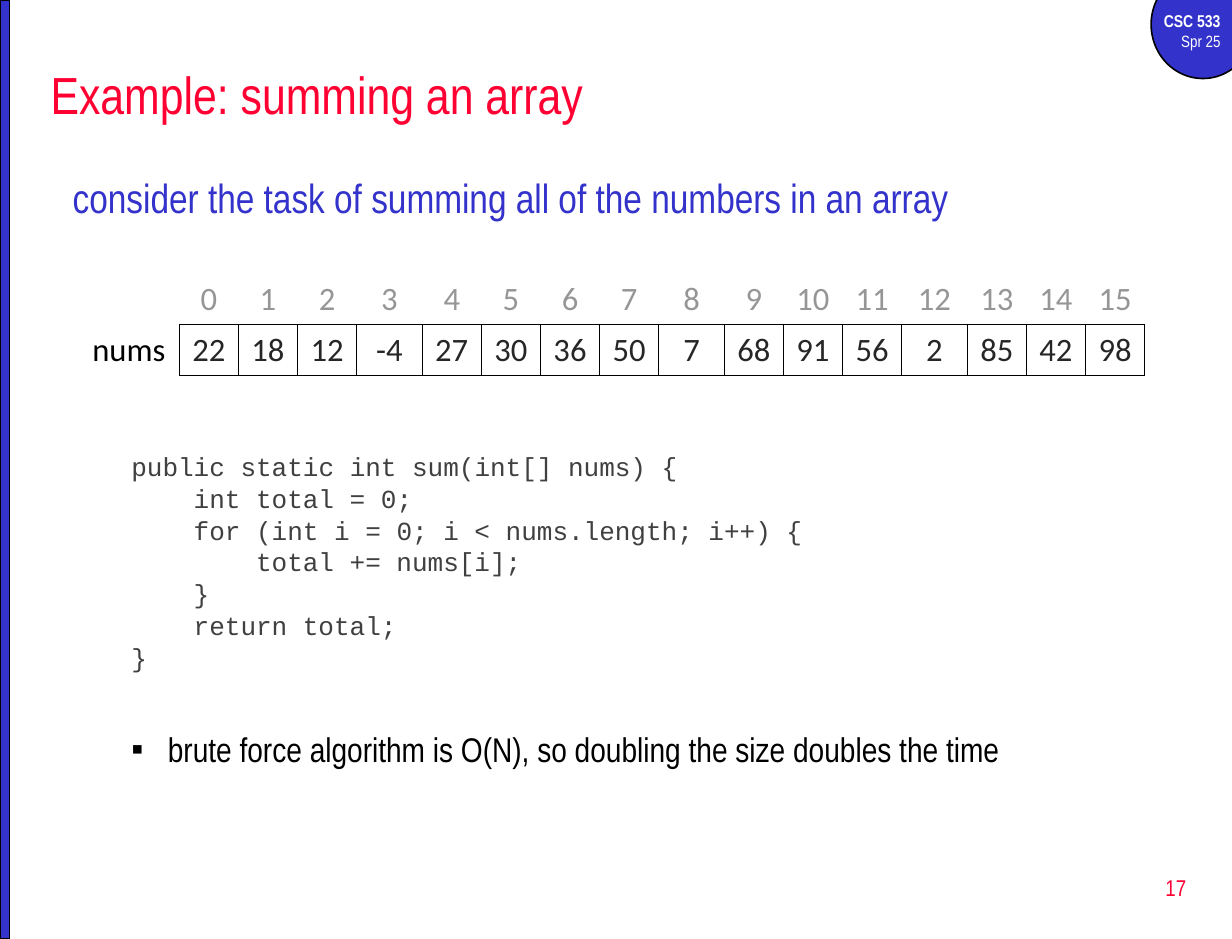
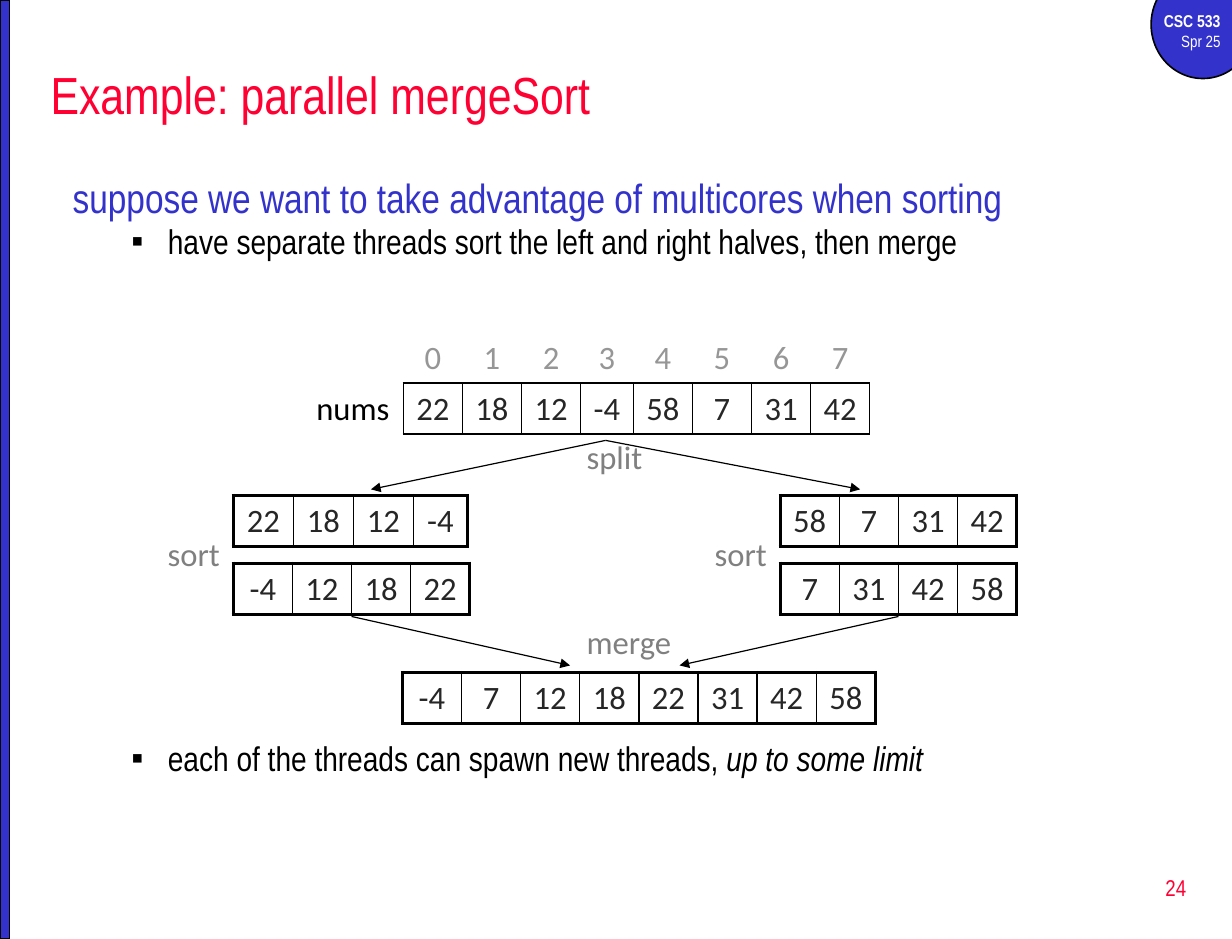
from dataclasses import dataclass

from lxml.etree import SubElement
from pptx import Presentation
from pptx.dml.color import RGBColor
from pptx.enum.shapes import MSO_CONNECTOR, MSO_SHAPE
from pptx.enum.text import MSO_ANCHOR, MSO_AUTO_SIZE, PP_ALIGN
from pptx.oxml.ns import qn
from pptx.util import Cm, Pt

BLUE = RGBColor(0x33, 0x33, 0xCC)
RED = RGBColor(0xFF, 0x00, 0x33)
BLACK = RGBColor(0x00, 0x00, 0x00)
WHITE = RGBColor(0xFF, 0xFF, 0xFF)
CODE_GRAY = RGBColor(0x40, 0x40, 0x40)
VALUE_GRAY = RGBColor(0x26, 0x26, 0x26)
INDEX_GRAY = RGBColor(0x96, 0x96, 0x96)
LABEL_GRAY = RGBColor(0x80, 0x80, 0x80)

HEADING_FONT = "Arial Narrow"
TABLE_FONT = "Calibri"
CODE_FONT = "Courier New"
PLAIN_TABLE_STYLE = "{2D5ABB26-0587-4C30-8999-92F81FD0307C}"

CELL_WIDTH = 1.28
LABEL_WIDTH = 2.18
ROW_HEIGHT = 1.1
THIN, THICK = 1, 2.25


@dataclass
class Box:
    left: float
    top: float
    width: float
    height: float

    def lengths(self):
        return Cm(self.left), Cm(self.top), Cm(self.width), Cm(self.height)


SLIDE_BOX = Box(0, 0, 26.67, 20.32)
TITLE_BOX = Box(0.84, 1.07, 25.2, 1.9)
BODY_BOX = Box(1.32, 3.61, 24.28, 15.04)
NUMBER_BOX = Box(20.37, 18.52, 5.56, 1.35)


def set_font(font, name, size, color, bold=False):
    font.name = name
    font.size = Pt(size)
    font.color.rgb = color
    font.bold = bold


def place(shape, box):
    shape.left, shape.top, shape.width, shape.height = box.lengths()


def add_text(slide, box, text, name, size, color, alignment=PP_ALIGN.LEFT):
    shape = slide.shapes.add_textbox(*box.lengths())
    frame = shape.text_frame
    frame.word_wrap = False
    paragraph = frame.paragraphs[0]
    paragraph.text = text
    paragraph.alignment = alignment
    set_font(paragraph.font, name, size, color)
    return shape


def add_blue_shape(slide, kind, box):
    shape = slide.shapes.add_shape(kind, *box.lengths())
    shape.shadow.inherit = False
    shape.fill.solid()
    shape.fill.fore_color.rgb = BLUE
    shape.line.color.rgb = BLACK
    shape.line.width = Pt(1)


def add_course_badge(slide, right):
    add_blue_shape(slide, MSO_SHAPE.OVAL, Box(right - 1.75, -0.64, 2.24, 2.34))
    badge = add_text(slide, Box(right - 2.11, 0.1, 2.11, 1.17), "CSC 533",
                     HEADING_FONT, 10.5, WHITE, PP_ALIGN.RIGHT)
    badge.text_frame.word_wrap = True
    badge.text_frame.paragraphs[0].font.bold = True
    term = badge.text_frame.add_paragraph()
    term.text = "Spr 25"
    term.alignment = PP_ALIGN.RIGHT
    set_font(term.font, HEADING_FONT, 10, WHITE)


def add_base_slide(presentation, title, number):
    slide = presentation.slides.add_slide(presentation.slide_layouts[1])
    add_course_badge(slide, SLIDE_BOX.width)
    add_blue_shape(slide, MSO_SHAPE.RECTANGLE, Box(0, 0, 0.21, SLIDE_BOX.height))

    place(slide.shapes.title, TITLE_BOX)
    frame = slide.shapes.title.text_frame
    frame.auto_size = MSO_AUTO_SIZE.NONE
    frame.vertical_anchor = MSO_ANCHOR.MIDDLE
    paragraph = frame.paragraphs[0]
    paragraph.text = title
    paragraph.alignment = PP_ALIGN.LEFT
    set_font(paragraph.font, HEADING_FONT, 32, RED)

    page = add_text(slide, NUMBER_BOX, str(number), HEADING_FONT, 14, RED, PP_ALIGN.RIGHT)
    page.text_frame.word_wrap = True
    page.text_frame.vertical_anchor = MSO_ANCHOR.MIDDLE
    return slide


def start_body(slide, heading):
    body = slide.placeholders[1]
    place(body, BODY_BOX)
    frame = body.text_frame
    frame.auto_size = MSO_AUTO_SIZE.NONE
    paragraph = frame.paragraphs[0]
    paragraph.text = heading
    format_paragraph(paragraph, 0.97, -0.97, 5)
    set_font(paragraph.font, HEADING_FONT, 25, BLUE)
    return frame


def format_paragraph(paragraph, margin, indent, space_before, bullet=None):
    properties = paragraph._p.get_or_add_pPr()
    properties.set("marL", str(Cm(margin)))
    properties.set("indent", str(Cm(indent)))
    if bullet:
        SubElement(properties, qn("a:buFont"), typeface="Arial")
        SubElement(properties, qn("a:buChar"), char=bullet)
    else:
        SubElement(properties, qn("a:buNone"))
    paragraph.space_before = Pt(space_before)


def add_bullet(frame, text, space_before=4.2, emphasis=None):
    paragraph = frame.add_paragraph()
    paragraph.level = 1
    paragraph.line_spacing = 0.8
    format_paragraph(paragraph, 2.06, -0.79, space_before, "▪")
    set_font(paragraph.font, HEADING_FONT, 21, BLACK)
    paragraph.add_run().text = text
    if emphasis:
        run = paragraph.add_run()
        run.text = emphasis
        run.font.italic = True


def add_code(frame, lines, first_space):
    for position, (depth, text) in enumerate(lines):
        paragraph = frame.add_paragraph()
        paragraph.text = text
        paragraph.level = 1
        paragraph.line_spacing = 0.8
        format_paragraph(paragraph, 1.27 + depth * 1.35, 0, 4.2 if position else first_space)
        set_font(paragraph.font, CODE_FONT, 16, CODE_GRAY)


def set_borders(cell, **widths):
    properties = cell._tc.get_or_add_tcPr()
    for position, side in enumerate(side for side in "LRTB" if side in widths):
        line = properties.makeelement(qn(f"a:ln{side}"), {"w": str(Pt(widths[side]))})
        fill = SubElement(line, qn("a:solidFill"))
        SubElement(fill, qn("a:srgbClr"), val=str(BLACK))
        properties.insert(position, line)


def fill_cell(cell, text, color):
    cell.fill.background()
    paragraph = cell.text_frame.paragraphs[0]
    paragraph.text = str(text)
    paragraph.alignment = PP_ALIGN.CENTER
    set_font(paragraph.font, TABLE_FONT, 20, color)


def add_plain_table(slide, left, top, row_count, widths):
    box = Box(left, top, sum(widths), row_count * ROW_HEIGHT)
    table = slide.shapes.add_table(row_count, len(widths), *box.lengths()).table
    table.first_row = table.horz_banding = False
    table._tbl.tblPr.find(qn("a:tableStyleId")).text = PLAIN_TABLE_STYLE
    for column, width in zip(table.columns, widths):
        column.width = Cm(width)
    return table


def cell_widths(values, special_widths):
    return [special_widths.get(index, CELL_WIDTH) for index in range(len(values))]


def add_indexed_array(slide, left, top, values, special_widths):
    widths = [LABEL_WIDTH] + cell_widths(values, special_widths)
    table = add_plain_table(slide, left, top, 2, widths)
    table.cell(0, 0).fill.background()
    fill_cell(table.cell(1, 0), "nums", BLACK)
    set_borders(table.cell(1, 0), R=THIN)
    for index, value in enumerate(values):
        header, cell = table.cell(0, index + 1), table.cell(1, index + 1)
        fill_cell(header, index, INDEX_GRAY)
        set_borders(header, B=THIN)
        fill_cell(cell, value, VALUE_GRAY)
        set_borders(cell, L=THIN, R=THIN, T=THIN, B=THIN)


def add_framed_array(slide, left, top, values, special_widths={}):
    table = add_plain_table(slide, left, top, 1, cell_widths(values, special_widths))
    last = len(values) - 1
    for index, value in enumerate(values):
        cell = table.cell(0, index)
        fill_cell(cell, value, VALUE_GRAY)
        set_borders(cell, L=THIN if index else THICK, R=THIN if index < last else THICK,
                    T=THICK, B=THICK)


def add_arrow(slide, start_x, start_y, end_x, end_y):
    arrow = slide.shapes.add_connector(
        MSO_CONNECTOR.STRAIGHT, Cm(start_x), Cm(start_y), Cm(end_x), Cm(end_y))
    arrow.line.color.rgb = BLACK
    arrow.line.width = Pt(0.75)
    SubElement(arrow.line._get_or_add_ln(), qn("a:tailEnd"), type="triangle")
    SubElement(arrow._element.spPr, qn("a:effectLst"))


def add_step_label(slide, left, top, width, text):
    add_text(slide, Box(left, top, width, 1.12), text, TABLE_FONT, 20, LABEL_GRAY)


def add_merge_diagram(slide, left, top, values):
    middle = len(values) // 2
    add_indexed_array(slide, left + 3.15, top, values, {3: 1.14})
    add_step_label(slide, left + 9.05, top + 2.13, 1.73, "split")
    add_step_label(slide, left + 9.05, top + 6.15, 2.39, "merge")

    halves = [
        (left + 1.65, values[:middle], {0: 1.3, 1: 1.3, 2: 1.3, 3: 1.17}, 4.63, 8.94),
        (left + 13.49, values[middle:], {}, 15.22, 11.31),
    ]
    for half_left, half, special_widths, split_end, merge_end in halves:
        add_arrow(slide, left + 9.71, top + 2.34, left + split_end, top + 3.4)
        add_framed_array(slide, half_left, top + 3.53, half, special_widths)
        add_step_label(slide, half_left - 1.67, top + 4.24, 1.65, "sort")
        add_framed_array(slide, half_left, top + 5, sorted(half))
        add_arrow(slide, half_left + 2 * CELL_WIDTH, top + 6.15, left + merge_end, top + 7.21)
    add_framed_array(slide, left + 5.31, top + 7.36, sorted(values))


def build_sum_slide(presentation):
    slide = add_base_slide(presentation, "Example: summing an array", 17)
    frame = start_body(slide, "consider the task of summing all of the numbers in an array")
    add_code(frame, [
        (0, "public static int sum(int[] nums) {"),
        (1, "int total = 0;"),
        (1, "for (int i = 0; i < nums.length; i++) {"),
        (2, "total += nums[i];"),
        (1, "}"),
        (1, "return total;"),
        (0, "}"),
    ], first_space=144)
    add_bullet(frame, "brute force algorithm is O(N), so doubling the size doubles the time", 39)
    values = [22, 18, 12, -4, 27, 30, 36, 50, 7, 68, 91, 56, 2, 85, 42, 98]
    add_indexed_array(slide, 1.7, 5.92, values, {3: 1.42, 8: 1.42, 12: 1.42})


def build_merge_sort_slide(presentation):
    slide = add_base_slide(presentation, "Example: parallel mergeSort", 24)
    frame = start_body(slide, "suppose we want to take advantage of multicores when sorting")
    add_bullet(frame, "have separate threads sort the left and right halves, then merge")
    add_bullet(frame, "each of the threads can spawn new threads, ", 297, "up to some limit")
    add_merge_diagram(slide, 3.4, 7.19, [22, 18, 12, -4, 58, 7, 31, 42])


def main():
    presentation = Presentation()
    presentation.slide_width = Cm(SLIDE_BOX.width)
    presentation.slide_height = Cm(SLIDE_BOX.height)
    build_sum_slide(presentation)
    build_merge_sort_slide(presentation)
    presentation.save("out.pptx")


if __name__ == "__main__":
    main()
